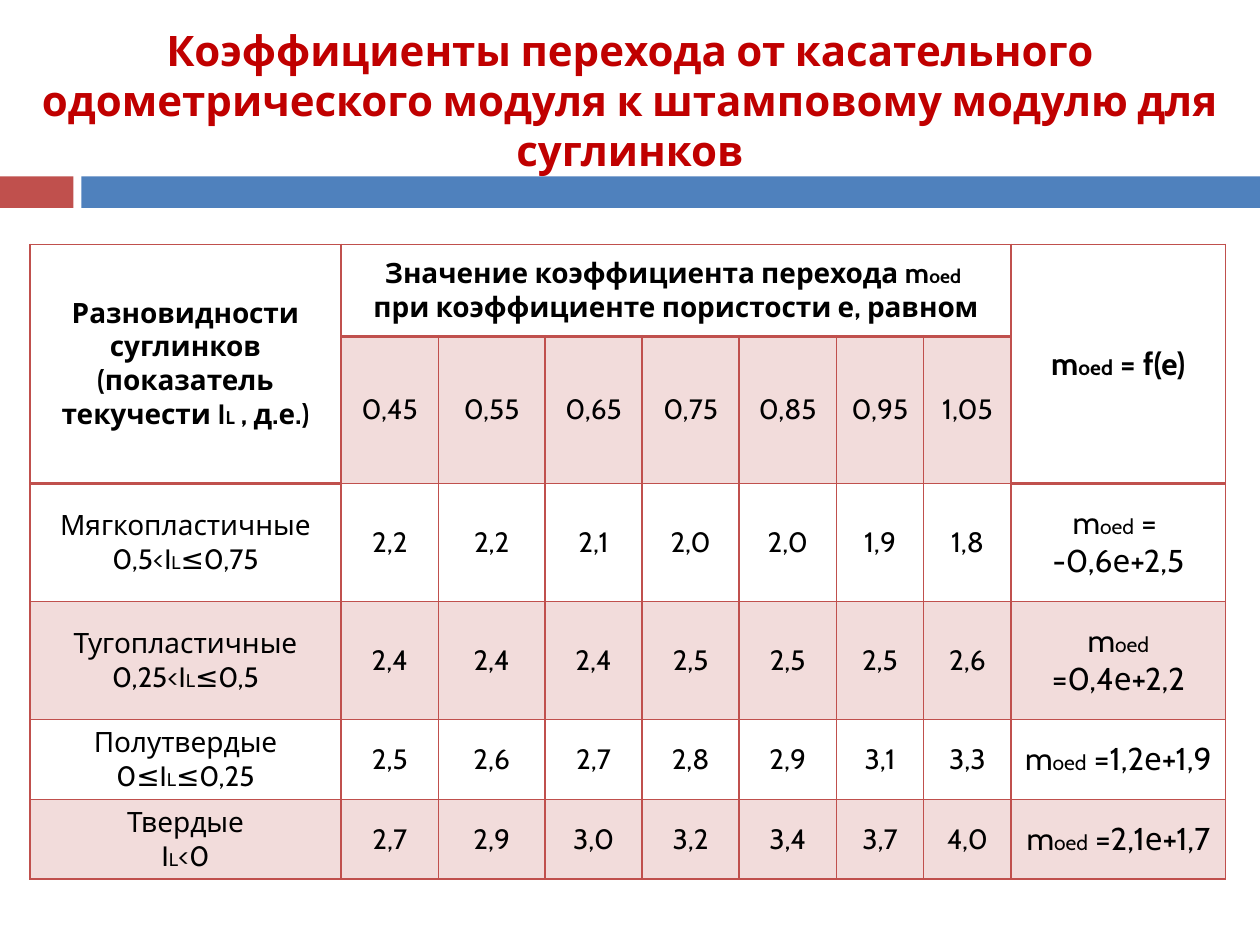
import lxml.etree
import pptx
import pptx.dml.color
import pptx.enum.shapes
import pptx.enum.text
import pptx.oxml.ns
import pptx.util

Pt = pptx.util.Pt
qn = pptx.oxml.ns.qn

FONT = "Cabin"
RED, BLUE, TITLE_RED, BLACK = "C0504D", "4F81BD", "C00000", "000000"
BODY = (16, 10.5)  # sizes of normal and index characters
SPAN_HEADING = (16, 11)
FORMULA = (18, 12)

COLUMN_WIDTHS = [178, 55.5, 61, 55.5, 55.5, 55.5, 50, 50, 122.5]
ROW_HEIGHTS = [52.5, 67.5, 67.5, 67.5, 39, 39]

# A bar switches between normal and index characters, a newline starts a paragraph
SOIL_HEADING = "Разновидности суглинков (показатель текучести I|L| , д.е.)"
COEFFICIENT_HEADING = "Значение коэффициента перехода m|oed|  при коэффициенте пористости е, равном"
FORMULA_HEADING = "m|oed| = f(e)"
POROSITIES = "0,45 0,55 0,65 0,75 0,85 0,95 1,05"
SOILS = [
    ("Мягкопластичные\n0,5<I|L|≤0,75", "2,2 2,2 2,1 2,0 2,0 1,9 1,8", "m|oed| = \n-0,6е+2,5"),
    ("Тугопластичные\n0,25<I|L|≤0,5", "2,4 2,4 2,4 2,5 2,5 2,5 2,6", "m|oed| =0,4е+2,2"),
    ("Полутвердые\n0≤I|L|≤0,25", "2,5 2,6 2,7 2,8 2,9 3,1 3,3", "m|oed| =1,2е+1,9"),
    ("Твердые\nI|L|<0", "2,7 2,9 3,0 3,2 3,4 3,7 4,0", "m|oed| =2,1е+1,7"),
]


def color(hex_string):
    return pptx.dml.color.RGBColor.from_string(hex_string)


def write(frame, text, sizes, bold=False, ink=BLACK):
    for number, line in enumerate(text.split("\n")):
        paragraph = frame.add_paragraph() if number else frame.paragraphs[0]
        paragraph.alignment = pptx.enum.text.PP_ALIGN.CENTER
        for position, part in enumerate(line.split("|")):
            run = paragraph.add_run()
            run.text = part
            run.font.name = FONT
            run.font.size = Pt(sizes[position % 2])
            run.font.bold = bold
            run.font.color.rgb = color(ink)


def add_band(slide, left, width, hex_fill):
    band = slide.shapes.add_shape(
        pptx.enum.shapes.MSO_SHAPE.RECTANGLE, Pt(left), Pt(100.8), Pt(width), Pt(18))
    band.shadow.inherit = False
    band.fill.solid()
    band.fill.fore_color.rgb = color(hex_fill)
    band.line.fill.background()


def add_title(slide, text):
    title = slide.shapes.add_textbox(Pt(0), Pt(18), Pt(720), Pt(78))
    frame = title.text_frame
    frame.word_wrap = True
    frame.vertical_anchor = pptx.enum.text.MSO_ANCHOR.MIDDLE
    write(frame, text, (24,), bold=True, ink=TITLE_RED)


def set_borders(cell, bottom_width):
    properties = cell._tc.get_or_add_tcPr()
    sides = [("a:lnL", 1), ("a:lnR", 1), ("a:lnT", 1), ("a:lnB", bottom_width)]
    for index, (tag, width) in enumerate(sides):
        line = lxml.etree.Element(qn(tag), w=str(Pt(width)))
        fill = lxml.etree.SubElement(line, qn("a:solidFill"))
        lxml.etree.SubElement(fill, qn("a:srgbClr"), val=RED)
        properties.insert(index, line)


def style_cell(cell, shaded, bottom_width):
    cell.vertical_anchor = pptx.enum.text.MSO_ANCHOR.MIDDLE
    if shaded:
        cell.fill.solid()
        cell.fill.fore_color.rgb = color(RED)
        tint = cell._tc.tcPr.find(qn("a:solidFill"))[0]
        lxml.etree.SubElement(tint, qn("a:alpha"), val="20000")
    else:
        cell.fill.background()
    set_borders(cell, bottom_width)


def add_coefficients(slide):
    table = slide.shapes.add_table(
        len(ROW_HEIGHTS), len(COLUMN_WIDTHS), Pt(17), Pt(139.7),
        Pt(sum(COLUMN_WIDTHS)), Pt(sum(ROW_HEIGHTS))).table
    table.first_row = table.horz_banding = False
    for column, width in zip(table.columns, COLUMN_WIDTHS):
        column.width = Pt(width)
    for row, height in zip(table.rows, ROW_HEIGHTS):
        row.height = Pt(height)

    # Shading of every second row, heavier rule under the headings
    last = len(COLUMN_WIDTHS) - 1
    for r in range(len(ROW_HEIGHTS)):
        for c in range(last + 1):
            heading = r == 0 or (r == 1 and c in (0, last))
            style_cell(table.cell(r, c), r % 2 == 1 and not heading, 2 if heading else 1)

    # Headings
    table.cell(0, 0).merge(table.cell(1, 0))
    table.cell(0, 1).merge(table.cell(0, last - 1))
    table.cell(0, last).merge(table.cell(1, last))
    write(table.cell(0, 0).text_frame, SOIL_HEADING, BODY, bold=True)
    write(table.cell(0, 1).text_frame, COEFFICIENT_HEADING, SPAN_HEADING, bold=True)
    write(table.cell(0, last).text_frame, FORMULA_HEADING, FORMULA, bold=True)

    # Porosities, then soils with their coefficients and formulas
    number_rows = [POROSITIES] + [numbers for _, numbers, _ in SOILS]
    for r, numbers in enumerate(number_rows, start=1):
        for c, number in enumerate(numbers.split(), start=1):
            write(table.cell(r, c).text_frame, number, BODY)
    for r, (soil, _, formula) in enumerate(SOILS, start=2):
        write(table.cell(r, 0).text_frame, soil, BODY)
        write(table.cell(r, last).text_frame, formula, FORMULA)


def main():
    deck = pptx.Presentation()
    deck.slide_width, deck.slide_height = Pt(720), Pt(540)
    slide = deck.slides.add_slide(deck.slide_layouts[6])
    # Divider under the title
    add_band(slide, 0, 42, RED)
    add_band(slide, 46.5, 673.5, BLUE)
    add_title(slide, "Коэффициенты перехода от касательного одометрического модуля "
                     "к штамповому модулю для суглинков")
    add_coefficients(slide)
    deck.save("out.pptx")


if __name__ == "__main__":
    main()
